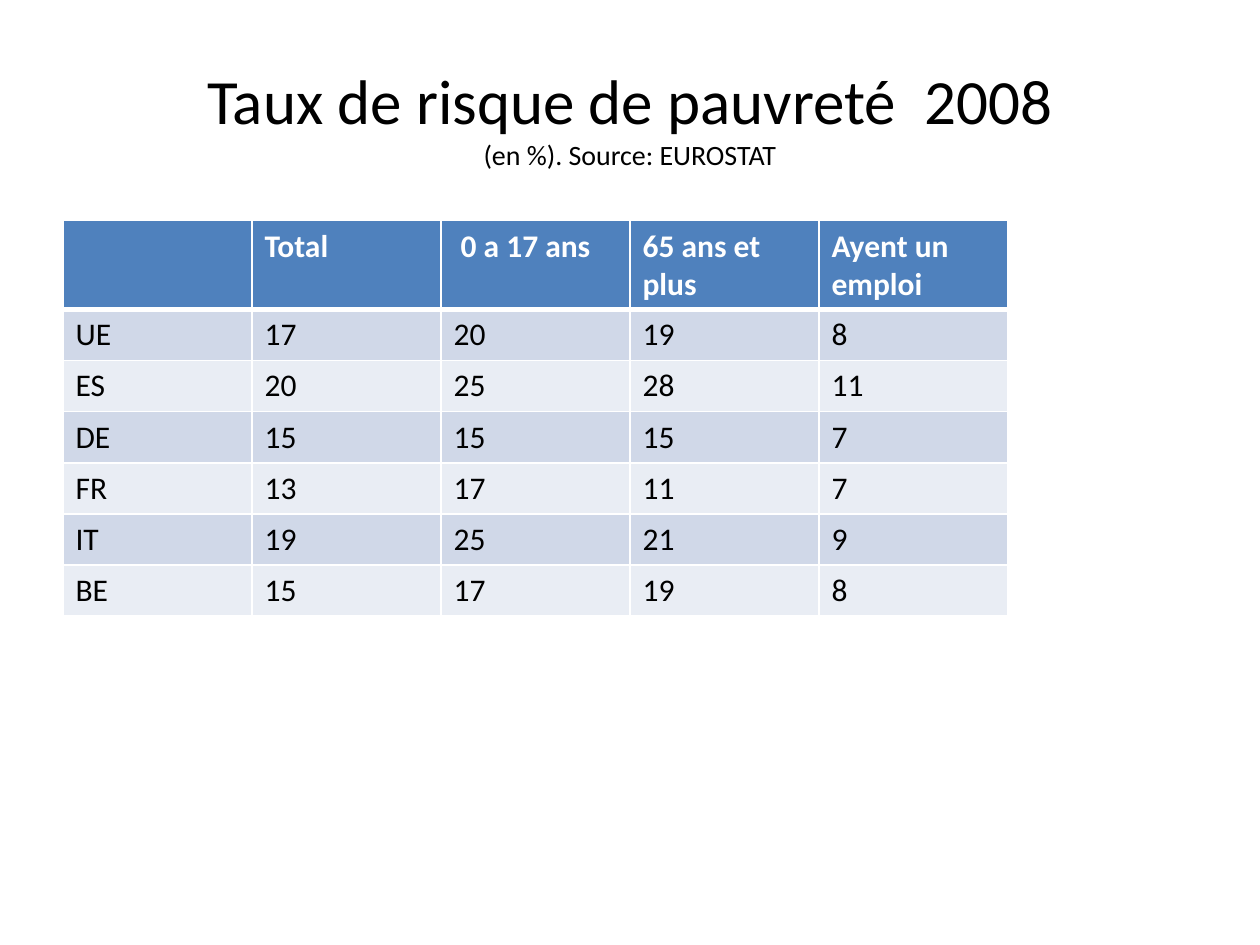
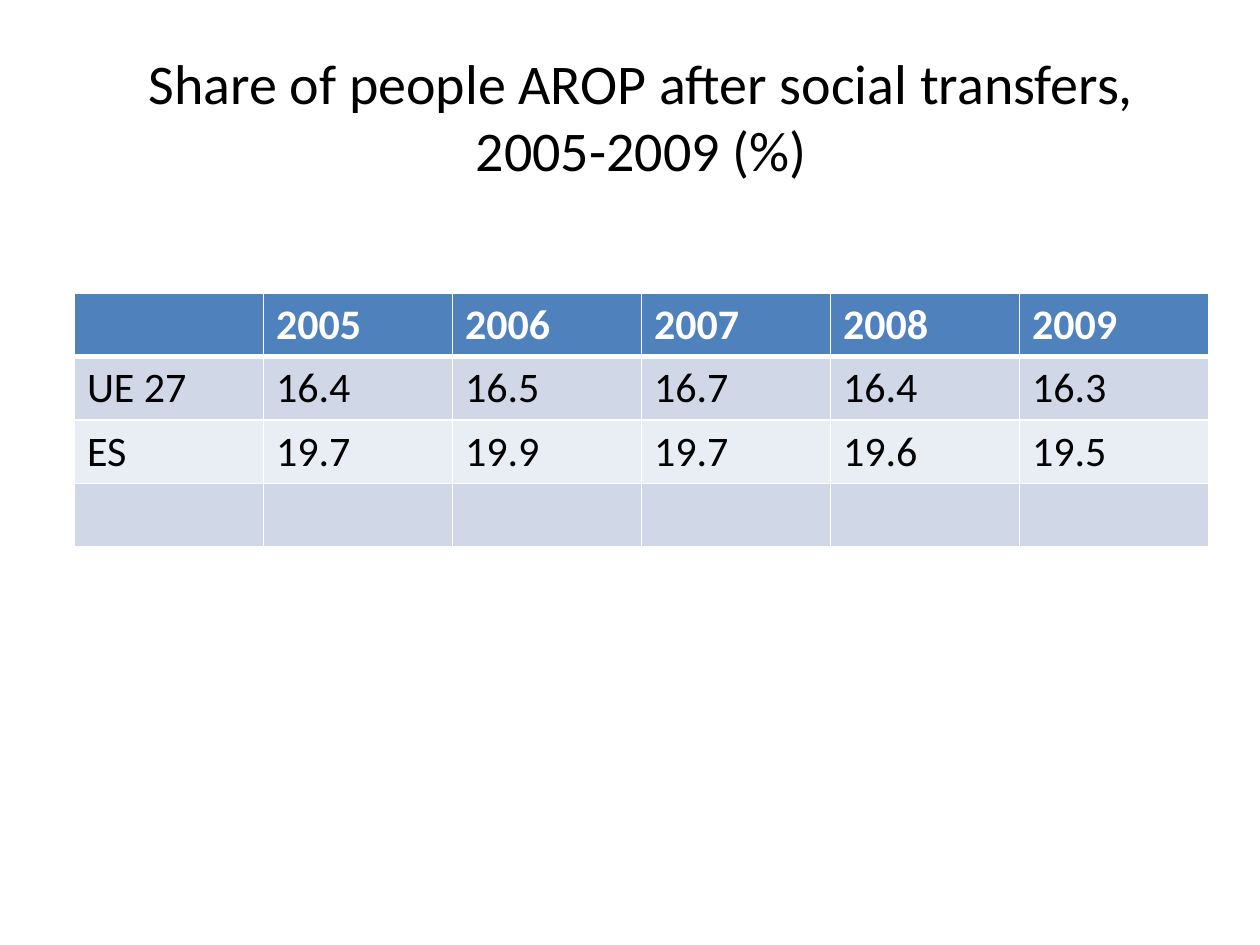
from dataclasses import dataclass

from lxml import etree
from pptx import Presentation
from pptx.dml.color import RGBColor
from pptx.enum.text import MSO_ANCHOR, PP_ALIGN
from pptx.oxml.ns import qn
from pptx.util import Cm, Pt

MIDDLE = MSO_ANCHOR.MIDDLE
CENTER = PP_ALIGN.CENTER
BLANK = 6


@dataclass(frozen=True)
class Theme:
    font: str = "Calibri"
    ink: str = "000000"
    paper: str = "FFFFFF"
    header: str = "4F81BD"
    bands: tuple = ("D0D8E8", "E9EDF4")
    title: int = 36
    long_title: int = 32
    source: int = 16
    cell: int = 18
    large_cell: int = 24
    rule: int = 1
    header_rule: int = 3


THEME = Theme()
TITLE_W, TITLE_H = Cm(22.86), Cm(3.18)
COL_W = Cm(3.81)

POVERTY_RISK = [
    ["", "Total", " 0 a 17 ans", "65 ans et plus", "Ayent un emploi"],
    ["UE", "17", "20", "19", "8"],
    ["ES", "20", "25", "28", "11"],
    ["DE", "15", "15", "15", "7"],
    ["FR", "13", "17", "11", "7"],
    ["IT", "19", "25", "21", "9"],
    ["BE", "15", "17", "19", "8"],
]
AFTER_TRANSFERS = [
    ["", "2005", "2006", "2007", "2008", "2009"],
    ["UE 27", "16.4", "16.5", "16.7", "16.4", "16.3"],
    ["ES", "19.7", "19.9", "19.7", "19.6", "19.5"],
    [""] * 6,
]


def style_font(font, size, color, bold=False):
    formats = {"name": THEME.font, "size": Pt(size), "bold": bold}
    for name, value in formats.items():
        setattr(font, name, value)
    font.color.rgb = RGBColor.from_string(color)


def add_title(s, left, top, lines):
    tf = s.shapes.add_textbox(left, top, TITLE_W, TITLE_H).text_frame
    for name, value in {"word_wrap": True, "vertical_anchor": MIDDLE}.items():
        setattr(tf, name, value)
    p = tf.paragraphs[0]
    p.alignment = CENTER
    for i, (text, size) in enumerate(lines):
        if i:
            p.add_line_break()
        r = p.add_run()
        r.text = text
        style_font(r.font, size, THEME.ink)


def add_borders(cell, top, bottom):
    tc_pr = cell._tc.get_or_add_tcPr()
    widths = {"L": THEME.rule, "R": THEME.rule, "T": top, "B": bottom}
    for side, width in widths.items():
        ln = etree.SubElement(tc_pr, qn(f"a:ln{side}"), w=str(Pt(width)))
        fill = etree.SubElement(ln, qn("a:solidFill"))
        etree.SubElement(fill, qn("a:srgbClr"), val=THEME.paper)


def fill_cell(cell, text, row, size):
    is_header = row == 0
    add_borders(
        cell,
        top=THEME.header_rule if row == 1 else THEME.rule,
        bottom=THEME.header_rule if is_header else THEME.rule,
    )
    color = THEME.header if is_header else THEME.bands[(row - 1) % 2]
    cell.fill.solid()
    cell.fill.fore_color.rgb = RGBColor.from_string(color)
    if text:
        r = cell.text_frame.paragraphs[0].add_run()
        r.text = text
        style_font(r.font, size, THEME.paper if is_header else THEME.ink, is_header)


def add_data_table(s, left, top, data, size, header_h, row_h):
    rows, cols = len(data), len(data[0])
    height = header_h + row_h * (rows - 1)
    table = s.shapes.add_table(rows, cols, left, top, COL_W * cols, height).table
    for column in table.columns:
        column.width = COL_W
    for i, values in enumerate(data):
        table.rows[i].height = row_h if i else header_h
        for j, text in enumerate(values):
            fill_cell(table.cell(i, j), text, i, size)


def add_poverty_risk(prs):
    s = prs.slides.add_slide(prs.slide_layouts[BLANK])
    add_title(s, Cm(1.27), Cm(0.76), [
        ("Taux de risque de pauvreté  2008", THEME.title),
        ("(en %). Source: EUROSTAT", THEME.source),
    ])
    add_data_table(s, Cm(1.27), Cm(4.45), POVERTY_RISK, THEME.cell, Cm(1.79), Cm(1.03))


def add_after_transfers(prs):
    s = prs.slides.add_slide(prs.slide_layouts[BLANK])
    title = "Share of people AROP after social transfers, 2005-2009 (%)"
    add_title(s, Cm(1.5), Cm(0.74), [(title, THEME.long_title)])
    add_data_table(s, Cm(1.5), Cm(5.92), AFTER_TRANSFERS, THEME.large_cell,
                   Cm(1.27), Cm(1.28))


def main():
    prs = Presentation()
    prs.slide_width, prs.slide_height = Cm(25.4), Cm(19.05)
    add_poverty_risk(prs)
    add_after_transfers(prs)
    prs.save("out.pptx")


if __name__ == "__main__":
    main()
